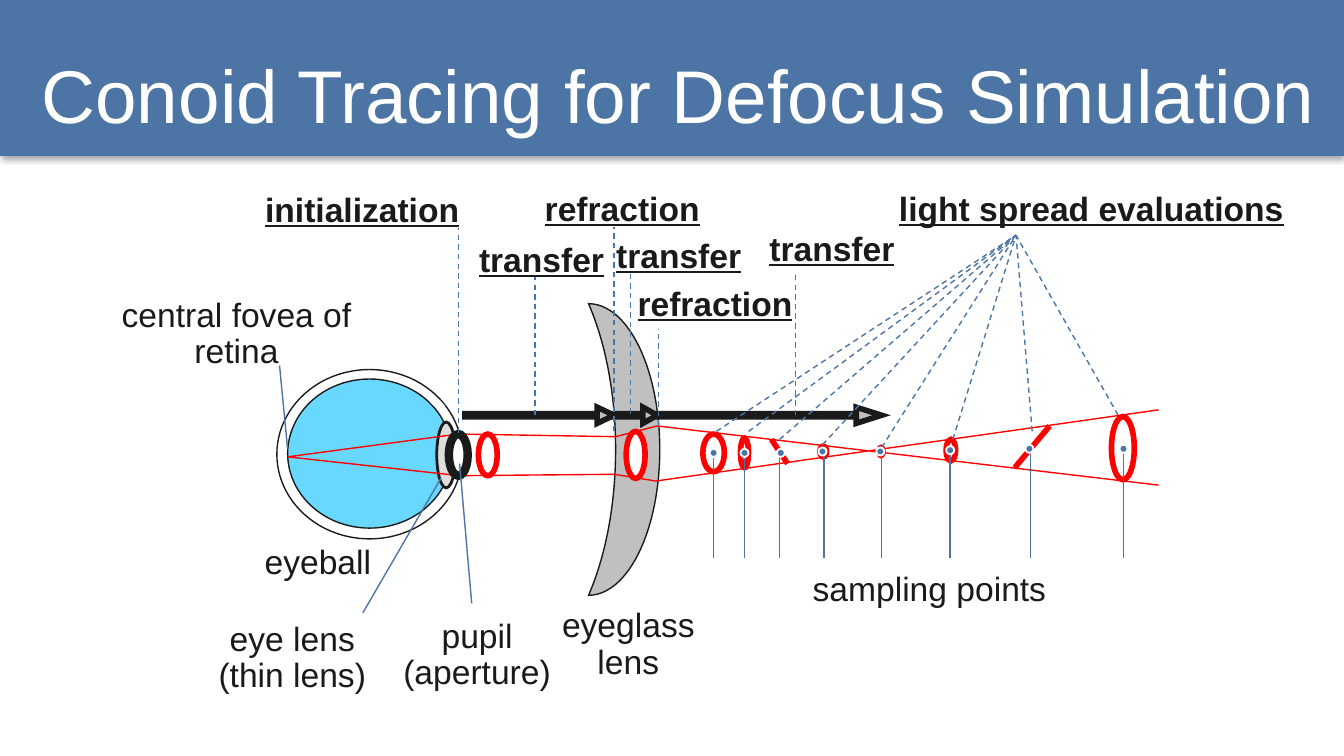
"""Build the slide on conoid tracing for defocus simulation."""
from lxml import etree
from pptx import Presentation
from pptx import util as u
from pptx.dml.color import RGBColor
from pptx.enum import dml, shapes, text
from pptx.oxml.ns import qn

PX = u.Inches(1) // 100
BLUE, RED, INK = "4C75A5", "FF0000", "1A1A1A"
WHITE, GRAY, PALE, SKY = "FFFFFF", "C0C0C0", "DDDDDD", "69D8FF"
FONT = "Arial"
KIND = shapes.MSO_SHAPE

TITLE = "Conoid Tracing for Defocus Simulation"
PART_LABELS = [
    ("central fovea of retina", 51, 218, 250, 64),
    ("pupil (aperture)", 283, 457, 144, 64),
    ("eyeglass lens", 402, 449, 131, 64),
    ("sampling points", 557, 422, 269, 36),
    ("eyeball", 186, 402, 101, 36),
    ("eye lens (thin lens)", 148, 459, 139, 64),
]
STEP_LABELS = [
    ("refraction", 378, 139, 170, 36),
    ("refraction", 460, 210, 144, 36),
    ("light spread evaluations", 644, 139, 336, 36),
    ("initialization", 182, 140, 175, 36),
    ("transfer", 346, 177, 114, 36),
    ("transfer", 562, 169, 114, 36),
    ("transfer", 448, 174, 114, 36),
]
EYE_PARTS = [
    (KIND.OVAL, (654, 333, 3, 6), WHITE, RED, 3, (), False),
    (KIND.MOON, (438, 226, 53, 217), GRAY, INK, 0.75, (0.62,), True),
    (KIND.OVAL, (206, 275, 138, 126), WHITE, INK, 0.75, (), False),
    (KIND.OVAL, (214, 282, 122, 111), SKY, INK, 0.75, (), False),
    (KIND.PARALLELOGRAM, (319, 298, 12, 4), WHITE, None, 0, (0.88,), True),
    (KIND.PARALLELOGRAM, (321, 371, 12, 4), WHITE, None, 0, (1.08,), False),
    (KIND.OVAL, (325, 314, 14, 49), PALE, INK, 1.5, (), False),
]
RAY_PATH = [(862, 361), (489, 317), (458, 325), (341, 323), (214, 340),
            (342, 354), (457, 353), (488, 358), (862, 305)]
PUPIL = (334, 323, 14, 31)
CONOID_SECTIONS = [
    (356, 323, 14, 31), (466, 321, 14, 35), (523, 323, 16, 28), (551, 326, 6, 22),
    (610, 332, 5, 8), (704, 327, 7, 16), (827, 310, 17, 47),
]
FOCUS = (654, 334, 2, 3)
TILTED_SECTIONS = [(574, 327, 586, 345), (781, 317, 755, 348)]
TRANSFER_ARROWS = [(346, 111, 1.05), (490, 166, 1.57), (457, 32, 0.89)]
LEADERS = [(214, 334, 208, 272), (351, 449, 342, 345), (328, 356, 270, 456)]
STEP_LINES = [(457, 321, 169), (490, 317, 245), (341, 322, 170),
              (398, 309, 204), (469, 308, 203), (592, 309, 204)]
FAN_TIP = (756, 175)
STEM_TOP, STEM_BOTTOM, DOT = 337, 415, 6
SAMPLES = [
    (531, (528, 334), (533, 321)), (554, (551, 334), (557, 321)),
    (580, (578, 334), (580, 327)), (613, (609, 333), (612, 331)),
    (656, (652, 333), (656, 333)), (707, (704, 332), (709, 327)),
    (767, (763, 331), (768, 321)), (836, (833, 331), (832, 309)),
]


def color(value):
    return RGBColor.from_string(value)


def emu(*lengths):
    return [length * PX for length in lengths]


def paint(shape, fill, line, width):
    shape.shadow.inherit = False
    if fill:
        shape.fill.solid()
        shape.fill.fore_color.rgb = color(fill)
    else:
        shape.fill.background()
    if line:
        shape.line.color.rgb = color(line)
        shape.line.width = u.Pt(width)
        etree.SubElement(shape.element.spPr.find(qn("a:ln")), qn("a:miter"), lim="800000")
    else:
        shape.line.fill.background()


def add_figure(slide, kind, box, fill, line=None, width=0, adjustments=(), flip=False):
    shape = slide.shapes.add_shape(kind, *emu(*box))
    paint(shape, fill, line, width)
    for index, value in enumerate(adjustments):
        shape.adjustments[index] = value
    if flip:
        shape.element.spPr.get_or_add_xfrm().set("flipH", "1")
    return shape


def add_line(slide, ends, line=BLUE, width=0.75, dashed=False):
    connector = slide.shapes.add_connector(shapes.MSO_CONNECTOR.STRAIGHT, *emu(*ends))
    connector.line.color.rgb = color(line)
    connector.line.width = u.Pt(width)
    if dashed:
        connector.line.dash_style = dml.MSO_LINE.DASH
    etree.SubElement(connector.element.spPr, qn("a:effectLst"))


def add_label(slide, words, box, step=False):
    frame = slide.shapes.add_textbox(*emu(*box)).text_frame
    frame.word_wrap = True
    frame.auto_size = text.MSO_AUTO_SIZE.SHAPE_TO_FIT_TEXT
    frame.margin_left = frame.margin_right = 9 * PX
    frame.margin_top = frame.margin_bottom = 4 * PX
    paragraph = frame.paragraphs[0]
    paragraph.text = words
    paragraph.alignment = text.PP_ALIGN.CENTER
    paragraph.line_spacing = 0.9
    font = paragraph.font
    font.name, font.size = FONT, u.Pt(18)
    font.color.rgb = color(INK)
    if step:
        font.bold = font.underline = True


def add_header(slide):
    band = add_figure(slide, KIND.RECTANGLE, (0, 0, 1000, 116), BLUE)
    effects = band.element.spPr.find(qn("a:effectLst"))
    shadow = etree.SubElement(effects, qn("a:outerShdw"), blurRad=str(u.Pt(3.1)),
                              dist=str(u.Pt(1.8)), dir="5400000", rotWithShape="0")
    tint = etree.SubElement(shadow, qn("a:srgbClr"), val="000000")
    etree.SubElement(tint, qn("a:alpha"), val="35000")
    title = slide.shapes.title
    title.element.addprevious(band.element)
    title.left, title.top, title.width, title.height = emu(20, 23, 969, 94)
    frame = title.text_frame
    frame.text = TITLE
    frame.auto_size = text.MSO_AUTO_SIZE.NONE
    frame.vertical_anchor = text.MSO_ANCHOR.MIDDLE
    paragraph = frame.paragraphs[0]
    paragraph.alignment = text.PP_ALIGN.CENTER
    paragraph.font.name, paragraph.font.size = FONT, u.Pt(40)
    paragraph.font.color.rgb = color(WHITE)


def add_eye_and_rays(slide):
    for part in EYE_PARTS:
        add_figure(slide, *part)
    builder = slide.shapes.build_freeform(*RAY_PATH[0], scale=PX)
    builder.add_line_segments(RAY_PATH[1:], close=False)
    paint(builder.convert_to_shape(), None, RED, 0.75)
    add_figure(slide, KIND.OVAL, PUPIL, WHITE, INK, 4.5)
    for box in CONOID_SECTIONS:
        add_figure(slide, KIND.OVAL, box, WHITE, RED, 3)
    add_figure(slide, KIND.OVAL, FOCUS, WHITE, BLUE, 2.25)
    for ends in TILTED_SECTIONS:
        add_line(slide, ends, RED, 3)


def add_steps(slide):
    for ends in LEADERS:
        add_line(slide, ends)
    for left, width, head in TRANSFER_ARROWS:
        add_figure(slide, KIND.RIGHT_ARROW, (left, 303, width, 12), GRAY, INK, 3, (0.2, head))
    for x, bottom, top in STEP_LINES:
        add_line(slide, (x, bottom, x, top), dashed=True)


def add_samples(slide):
    for x, dot, ray in SAMPLES:
        add_line(slide, (x, STEM_TOP, x, STEM_BOTTOM))
        add_line(slide, (*ray, *FAN_TIP), dashed=True)
        add_figure(slide, KIND.OVAL, (*dot, DOT, DOT), BLUE, WHITE, 1)


def main():
    presentation = Presentation()
    presentation.slide_width = 1000 * PX
    presentation.slide_height = presentation.slide_width * 9 // 16
    slide = presentation.slides.add_slide(presentation.slide_layouts[5])
    add_header(slide)
    add_eye_and_rays(slide)
    add_steps(slide)
    add_samples(slide)
    for labels, step in ((PART_LABELS, False), (STEP_LABELS, True)):
        for words, *box in labels:
            add_label(slide, words, box, step)
    presentation.save("out.pptx")


if __name__ == "__main__":
    main()
